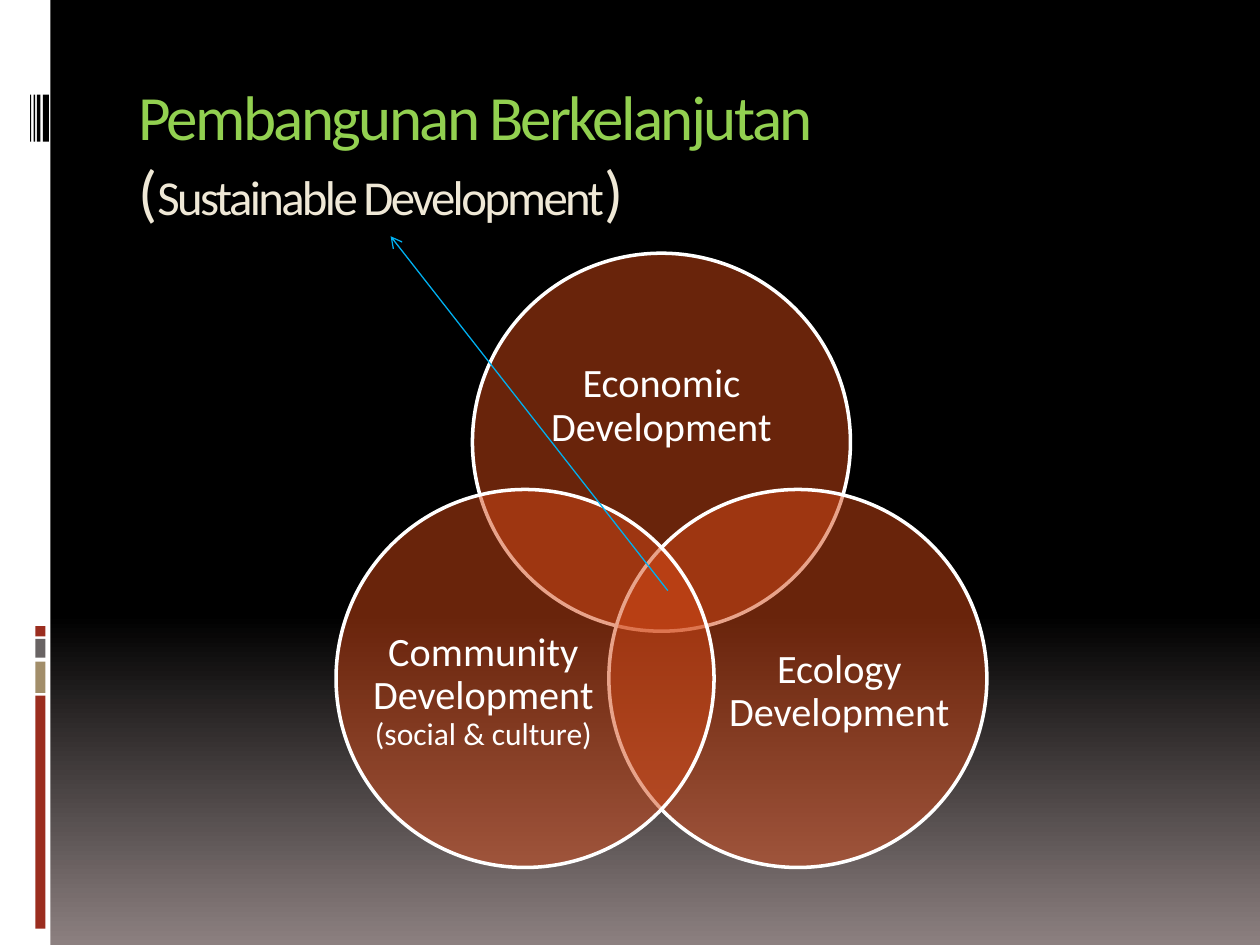
from copy import deepcopy
from math import cos, radians, sin
from typing import NamedTuple

from pptx import Presentation
from pptx.dml.color import RGBColor
from pptx.enum.shapes import MSO_CONNECTOR, MSO_SHAPE
from pptx.enum.text import MSO_ANCHOR, PP_ALIGN
from pptx.oxml.ns import qn
from pptx.oxml.xmlchemy import OxmlElement
from pptx.util import Inches, Pt


class Theme:
    font = "Calibri"
    black, white, grey = "000000", "FFFFFF", "8C8080"
    red, tan, slate = "9B2D1F", "A28E6A", "696464"
    green, cream, orange, blue = "92D050", "EFE8D6", "D34817", "00B0F0"
    title, sub, label, note = 36, 27.9, 23, 18


class Box(NamedTuple):
    x: float
    y: float
    w: float
    h: float

    def inner(self, x, y, w, h):
        """Return a box given as shares of this one."""
        return Box(self.x + x * self.w, self.y + y * self.h, w * self.w, h * self.h)

    def emu(self):
        return [Inches(v) for v in self]


def color(text):
    return RGBColor.from_string(text)


def add_shape(shapes, kind, box, fill):
    shape = shapes.add_shape(kind, *box.emu())
    shape.shadow.inherit = False
    shape.fill.solid()
    shape.fill.fore_color.rgb = color(fill)
    shape.line.fill.background()
    return shape


def add_run(para, text, size, tint):
    run = para.add_run()
    run.text = text
    run.font.name = Theme.font
    run.font.size = Pt(size)
    run.font.color.rgb = color(tint)
    return run


def add_text(shapes, box, inset=0):
    """Add a wrapping text box and return its frame."""
    frame = shapes.add_textbox(*box.emu()).text_frame
    frame.word_wrap = True
    frame.margin_left = frame.margin_right = Inches(inset)
    frame.margin_top = frame.margin_bottom = Inches(inset / 2)
    return frame


def paint_back(slide):
    fill = slide.background.fill
    fill.gradient()
    fill.gradient_angle = 270
    stops = slide.element.find(".//" + qn("a:gsLst"))
    stops.insert(1, deepcopy(stops[0]))
    tints = (0, Theme.black), (0.65, Theme.black), (1, Theme.grey)
    for stop, (place, tint) in zip(fill.gradient_stops, tints):
        stop.position = place
        stop.color.rgb = color(tint)


def draw_strip(shapes, box):
    """Draw the white side strip with its bars and stripes."""
    add_shape(shapes, MSO_SHAPE.RECTANGLE, box, Theme.white)
    bars = [(4.97, 0.08, Theme.red), (5.07, 0.15, Theme.slate),
            (5.25, 0.25, Theme.tan), (5.52, 1.85, Theme.red)]
    for top, high, tint in bars:
        bar = box.inner(0.7, top / 7.5, 0.2, high / 7.5)
        add_shape(shapes, MSO_SHAPE.RECTANGLE, bar, tint)
    for left, wide in (0.6, 0.02), (0.67, 0.03), (0.73, 0.07), (0.85, 0.12):
        stripe = box.inner(left, 0.1, wide, 0.05)
        add_shape(shapes, MSO_SHAPE.RECTANGLE, stripe, Theme.black)


def write_title(shapes, box):
    para = add_text(shapes, box, 0.1).paragraphs[0]
    runs = [add_run(para, "Pembangunan Berkelanjutan", Theme.title, Theme.green)]
    para.add_line_break()
    for text, size in (("(", Theme.title), ("Sustainable Development", Theme.sub),
                       (")", Theme.title)):
        runs.append(add_run(para, text, size, Theme.cream))
    for run in runs:
        run.font._element.set("spc", "-150")


def draw_disc(shapes, box):
    disc = add_shape(shapes, MSO_SHAPE.OVAL, box, Theme.orange)
    alpha = OxmlElement("a:alpha")
    alpha.set("val", "50000")
    disc.element.spPr.find(".//" + qn("a:srgbClr")).append(alpha)
    disc.line.color.rgb = color(Theme.white)
    disc.line.width = Pt(2)


def draw_venn(shapes, box):
    """Place three discs evenly around the centre of a square box."""
    group = shapes.add_group_shape().shapes
    side = 0.46  # disc size as a share of the box
    reach = side * 1.25 / 3
    discs = [
        (-90, (0.13, 0.18, 0.74, 0.45), "Economic Development", ""),
        (30, (0.31, 0.26, 0.6, 0.55), "Ecology Development", ""),
        (150, (0.09, 0.26, 0.6, 0.55), "Community Development ", "(social & culture)"),
    ]
    for angle, area, name, note in discs:
        turn = radians(angle)
        left, top = (0.5 + reach * f(turn) - side / 2 for f in (cos, sin))
        disc = box.inner(left, top, side, side)
        draw_disc(group, disc)
        frame = add_text(group, disc.inner(*area))
        frame.vertical_anchor = MSO_ANCHOR.MIDDLE
        para = frame.paragraphs[0]
        para.alignment = PP_ALIGN.CENTER
        para.line_spacing = 0.9
        add_run(para, name, Theme.label, Theme.white)
        if note:
            add_run(para, note, Theme.note, Theme.white)


def draw_arrow(shapes, box):
    """Point from the bottom right to the top left of the box."""
    x, y, w, h = box.emu()
    arrow = shapes.add_connector(MSO_CONNECTOR.STRAIGHT, x + w, y + h, x, y)
    arrow.line.color.rgb = color(Theme.blue)
    arrow.line.width = Pt(0.75)
    tip = OxmlElement("a:tailEnd")
    tip.set("type", "arrow")
    props = arrow._element.spPr
    props.find(qn("a:ln")).append(tip)
    props.append(OxmlElement("a:effectLst"))


def main():
    deck = Presentation()
    page = Box(0, 0, 10, 7.5)
    deck.slide_width, deck.slide_height = Inches(page.w), Inches(page.h)
    slide = deck.slides.add_slide(deck.slide_layouts[6])
    shapes = slide.shapes
    paint_back(slide)
    draw_strip(shapes, page.inner(0, 0, 0.04, 1))
    write_title(shapes, page.inner(0.1, 0.075, 0.85, 0.13))
    side = 3 / 0.46
    draw_venn(shapes, Box(5.25 - side / 2, 4.76 - side / 2, side, side))
    draw_arrow(shapes, page.inner(0.31, 0.25, 0.22, 0.375))
    deck.save("out.pptx")


if __name__ == "__main__":
    main()
